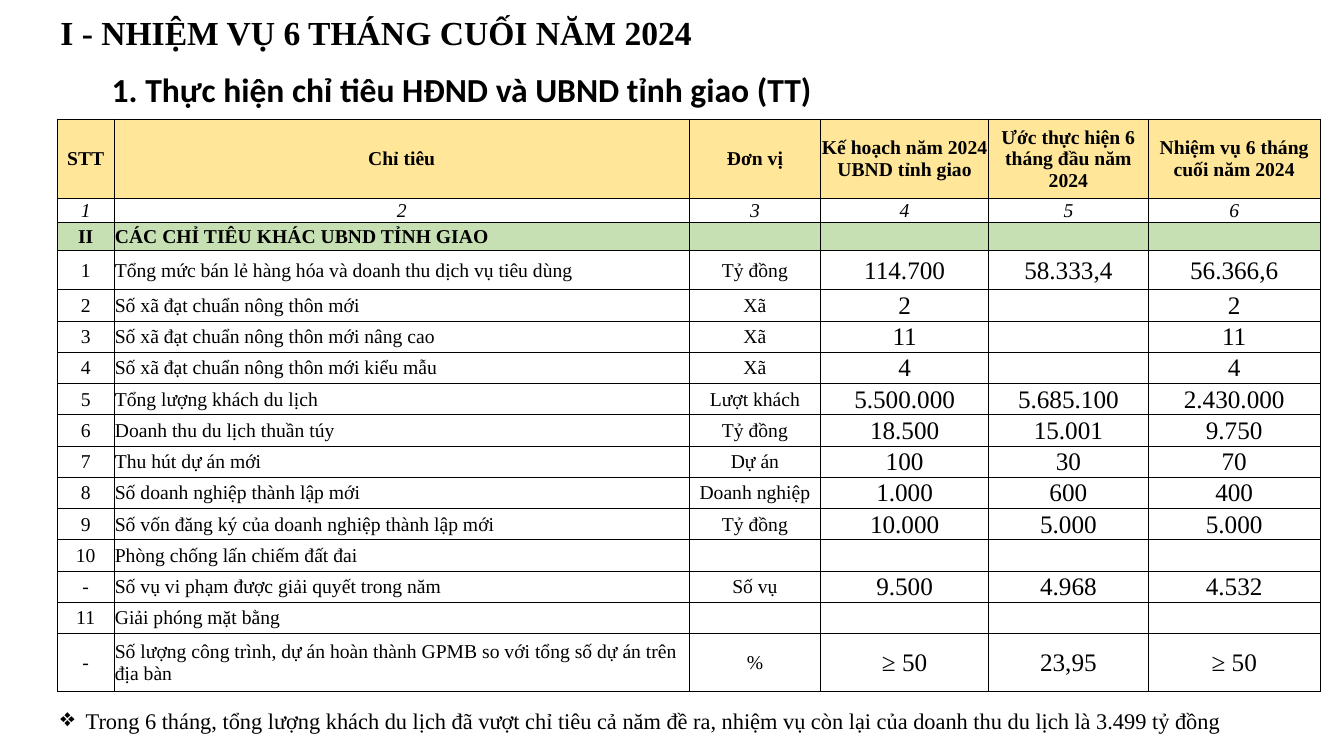
from lxml.etree import SubElement
from pptx import Presentation
from pptx.dml.color import RGBColor
from pptx.enum.text import MSO_ANCHOR, PP_ALIGN
from pptx.oxml.ns import qn
from pptx.util import Pt

COLORS = {"text": "000000", "border": "000000", "header": "FFE699", "section": "C6E0B4"}
SERIF = "Times New Roman"
COLUMN_WIDTHS = [40.32, 411.12, 93.6, 120.24, 113.76, 123.12]
ROW_HEIGHTS = [56.5, 17.5, 20, 28] + [22.3] * 11 + [41.2]
NAME_COLUMN = 1
FIRST_VALUE_COLUMN = 3
HEADER_ROWS = 3
TARGETS = [
    ["STT", "Chỉ tiêu", "Đơn vị", "Kế hoạch năm 2024 UBND tỉnh giao",
     "Ước thực hiện 6 tháng đầu năm 2024", "Nhiệm vụ 6 tháng cuối năm 2024"],
    ["1", "2", "3", "4", "5", "6"],
    ["II", "CÁC CHỈ TIÊU KHÁC UBND TỈNH GIAO", "", "", "", ""],
    ["1", "Tổng mức bán lẻ hàng hóa và doanh thu dịch vụ tiêu dùng", "Tỷ đồng",
     "114.700", "58.333,4", "56.366,6"],
    ["2", "Số xã đạt chuẩn nông thôn mới", "Xã", "2", "", "2"],
    ["3", "Số xã đạt chuẩn nông thôn mới nâng cao", "Xã", "11", "", "11"],
    ["4", "Số xã đạt chuẩn nông thôn mới kiểu mẫu", "Xã", "4", "", "4"],
    ["5", "Tổng lượng khách du lịch", "Lượt khách", "5.500.000", "5.685.100", "2.430.000"],
    ["6", "Doanh thu du lịch thuần túy", "Tỷ đồng", "18.500", "15.001", "9.750"],
    ["7", "Thu hút dự án mới", "Dự án", "100", "30", "70"],
    ["8", "Số doanh nghiệp thành lập mới", "Doanh nghiệp", "1.000", "600", "400"],
    ["9", "Số vốn đăng ký của doanh nghiệp thành lập mới", "Tỷ đồng",
     "10.000", "5.000", "5.000"],
    ["10", "Phòng chống lấn chiếm đất đai", "", "", "", ""],
    ["-", "Số vụ vi phạm được giải quyết trong năm", "Số vụ", "9.500", "4.968", "4.532"],
    ["11", "Giải phóng mặt bằng", "", "", "", ""],
    ["-", "Số lượng công trình, dự án hoàn thành GPMB so với tổng số dự án trên địa bàn",
     "%", "≥ 50", "23,95", "≥ 50"],
]
NOTE = ("Trong 6 tháng, tổng lượng khách du lịch đã vượt chỉ tiêu cả năm đề ra, "
        "nhiệm vụ còn lại của doanh thu du lịch là 3.499 tỷ đồng")


def add_run(paragraph, text, size, font=SERIF, bold=False, italic=False):
    """Append one formatted run to a paragraph."""
    run = paragraph.add_run()
    run.text = text
    run.font.size = Pt(size)
    run.font.name = font
    run.font.bold = bold
    run.font.italic = italic
    run.font.color.rgb = RGBColor.from_string(COLORS["text"])


def add_heading(slide, text, font, left, top, width):
    """Add a bold one-line heading."""
    frame = slide.shapes.add_textbox(Pt(left), Pt(top), Pt(width), Pt(36)).text_frame
    frame.word_wrap = True
    add_run(frame.paragraphs[0], text, 24, font, bold=True)


def add_plain_table(slide, left, top, widths, heights):
    """Add a table without banding and with fixed column and row sizes."""
    table = slide.shapes.add_table(len(heights), len(widths), Pt(left), Pt(top),
                                   Pt(sum(widths)), Pt(sum(heights))).table
    table.first_row = table.horz_banding = False
    for column, width in zip(table.columns, widths):
        column.width = Pt(width)
    for row, height in zip(table.rows, heights):
        row.height = Pt(height)
    return table


def style_cell(cell, fill=None, border=None):
    """Set the borders, fill and vertical anchor of a cell."""
    properties = cell._tc.get_or_add_tcPr()
    for side in ("a:lnL", "a:lnR", "a:lnT", "a:lnB"):
        line = SubElement(properties, qn(side), w=str(Pt(0.5)))
        if border:
            solid = SubElement(line, qn("a:solidFill"))
            SubElement(solid, qn("a:srgbClr"), val=border)
        else:
            SubElement(line, qn("a:noFill"))
    if fill:
        cell.fill.solid()
        cell.fill.fore_color.rgb = RGBColor.from_string(fill)
    else:
        cell.fill.background()
    cell.vertical_anchor = MSO_ANCHOR.MIDDLE


def fill_target_cell(cell, text, row, column):
    """Write one cell of the targets table, styled by its row and column."""
    fills = {0: COLORS["header"], 2: COLORS["section"]}
    style_cell(cell, fills.get(row), COLORS["border"])
    cell.margin_left = cell.margin_right = cell.margin_top = Pt(0.7)
    cell.margin_bottom = Pt(0)
    paragraph = cell.text_frame.paragraphs[0]
    is_name = column == NAME_COLUMN and row >= 2
    paragraph.alignment = PP_ALIGN.LEFT if is_name else PP_ALIGN.CENTER
    if text:
        is_value = row >= HEADER_ROWS and column >= FIRST_VALUE_COLUMN
        add_run(paragraph, text, 18 if is_value else 14, bold=row in fills, italic=row == 1)
    else:
        SubElement(paragraph._p, qn("a:endParaRPr"), sz="1400")


def add_targets(slide):
    """Add the table of targets."""
    table = add_plain_table(slide, 41.04, 85, COLUMN_WIDTHS, ROW_HEIGHTS)
    for row, texts in enumerate(TARGETS):
        for column, text in enumerate(texts):
            fill_target_cell(table.cell(row, column), text, row, column)


def add_note(slide):
    """Add the bulleted note in a borderless one-cell table."""
    cell = add_plain_table(slide, 36, 472.3, [902.16], [85]).cell(0, 0)
    style_cell(cell)
    paragraph = cell.text_frame.paragraphs[0]
    paragraph.alignment = PP_ALIGN.JUSTIFY
    paragraph.space_after = Pt(12)
    properties = paragraph._p.get_or_add_pPr()
    properties.set("marL", str(Pt(13.5)))
    properties.set("indent", str(-Pt(13.5)))
    SubElement(properties, qn("a:buChar"), char="❖")
    add_run(paragraph, " ", 18)
    add_run(paragraph, NOTE, 16)


def main():
    """Build and save the slide."""
    presentation = Presentation()
    presentation.slide_width, presentation.slide_height = Pt(960), Pt(540)
    slide = presentation.slides.add_slide(presentation.slide_layouts[6])
    add_heading(slide, "I - NHIỆM VỤ 6 THÁNG CUỐI NĂM 2024", SERIF, 36, 5, 906.5)
    add_heading(slide, "1. Thực hiện chỉ tiêu HĐND và UBND tỉnh giao (TT)", "Calibri",
                72.7, 46, 589)
    add_targets(slide)
    add_note(slide)
    presentation.save("out.pptx")


if __name__ == "__main__":
    main()
